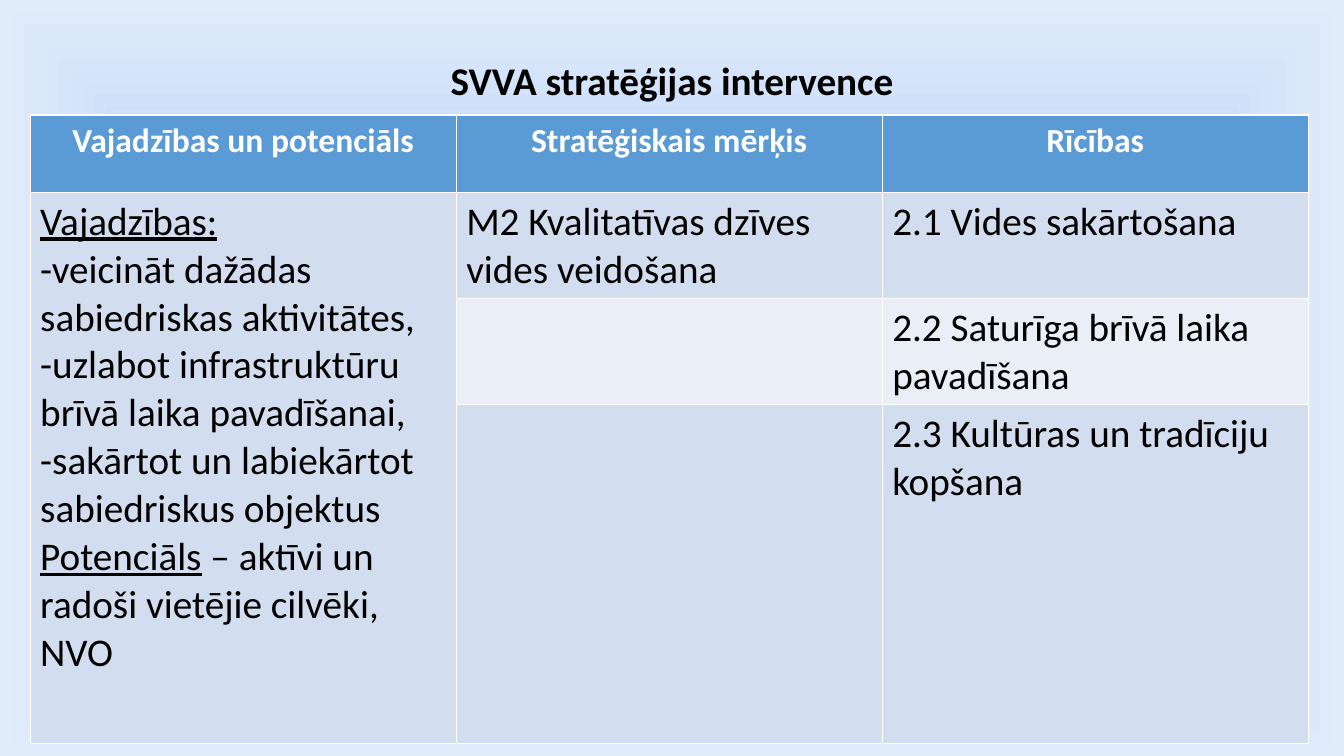
from lxml import etree
from pptx import Presentation
from pptx.dml import color
from pptx.enum import text
from pptx.oxml import ns
from pptx.util import Cm, Pt

FONT = "Calibri"
HUES = {
    "ink": "000000",
    "white": "FFFFFF",
    "head": "5B9BD5",
    "dark": "D2DEEF",
    "light": "EAEFF7",
    "gold": "FFD966",
    "sky": "C1D8F8",
    "edge": "E1ECFB",
}
HEADS = ["Vajadzības un potenciāls", "Stratēģiskais mērķis", "Rīcības"]
NEEDS = [
    [("Vajadzības:", True)],
    [("-veicināt dažādas sabiedriskas aktivitātes,", False)],
    [("-uzlabot infrastruktūru brīvā laika pavadīšanai,", False)],
    [("-sakārtot un labiekārtot sabiedriskus objektus", False)],
    [("Potenciāls", True), (" – aktīvi un radoši vietējie cilvēki, NVO", False)],
]
GOAL = "M2 Kvalitatīvas dzīves vides veidošana"
ACTS = [
    "2.1 Vides sakārtošana",
    "2.2 Saturīga brīvā laika pavadīšana",
    "2.3 Kultūras un tradīciju kopšana",
]
ROWS = [1.96, 2.67, 2.67, 8.53]


def rgb(hue):
    return color.RGBColor.from_string(HUES[hue])


def style(para, size, hue="ink", bold=False):
    font = para.font
    font.name, font.size, font.bold = FONT, Pt(size), bold
    font.color.rgb = rgb(hue)


def fill_back(slide):
    slide.background.fill.gradient()
    grad = slide.background._cSld.find(".//" + ns.qn("a:gradFill"))
    for child in list(grad):
        grad.remove(child)
    stops = etree.SubElement(grad, ns.qn("a:gsLst"))
    for pos, hue in ((0, "gold"), (50, "sky"), (100, "edge")):
        stop = etree.SubElement(stops, ns.qn("a:gs"), pos=str(pos * 1000))
        etree.SubElement(stop, ns.qn("a:srgbClr"), val=HUES[hue])
    shade = etree.SubElement(grad, ns.qn("a:path"), path="shape")
    sides = {side: "50000" for side in "ltrb"}
    etree.SubElement(shade, ns.qn("a:fillToRect"), **sides)


def add_title(slide, left, top, width, height):
    title = slide.shapes.title
    title.left, title.top = Cm(left), Cm(top)
    title.width, title.height = Cm(width), Cm(height)
    frame = title.text_frame
    frame.text = "SVVA stratēģijas intervence"
    frame.vertical_anchor = text.MSO_ANCHOR.MIDDLE
    para = frame.paragraphs[0]
    para.alignment = text.PP_ALIGN.CENTER
    para.line_spacing = 0.9
    style(para, 28, bold=True)


def write_needs(frame):
    for index, parts in enumerate(NEEDS):
        para = frame.add_paragraph() if index else frame.paragraphs[0]
        style(para, 28)
        for words, under in parts:
            run = para.add_run()
            run.text = words
            run.font.underline = under


def write_cell(cell, words, size, hue, bold=False):
    cell.text = words
    para = cell.text_frame.paragraphs[0]
    style(para, size, hue, bold)
    return para


def add_grid(slide, left, top, width):
    shape = slide.shapes.add_table(
        len(ROWS), len(HEADS), Cm(left), Cm(top), Cm(width), Cm(sum(ROWS)))
    table = shape.table
    for row, height in zip(table.rows, ROWS):
        row.height = Cm(height)
    bands = ["head", "dark", "light", "dark"]
    for row, band in zip(table.rows, bands):
        for cell in row.cells:
            cell.fill.solid()
            cell.fill.fore_color.rgb = rgb(band)
    for col, words in enumerate(HEADS):
        para = write_cell(table.cell(0, col), words, 24, "white", True)
        para.alignment = text.PP_ALIGN.CENTER
    table.cell(1, 0).merge(table.cell(3, 0))
    write_needs(table.cell(1, 0).text_frame)
    write_cell(table.cell(1, 1), GOAL, 28, "ink")
    for row, words in enumerate(ACTS, 1):
        write_cell(table.cell(row, 2), words, 28, "ink")


def main():
    deck = Presentation()
    deck.slide_width, deck.slide_height = Cm(33.87), Cm(19.05)
    slide = deck.slides.add_slide(deck.slide_layouts[5])
    fill_back(slide)
    add_title(slide, 2.33, 1.01, 29.21, 2.13)
    add_grid(slide, 0.76, 2.9, 32.21)
    deck.save("out.pptx")


if __name__ == "__main__":
    main()
